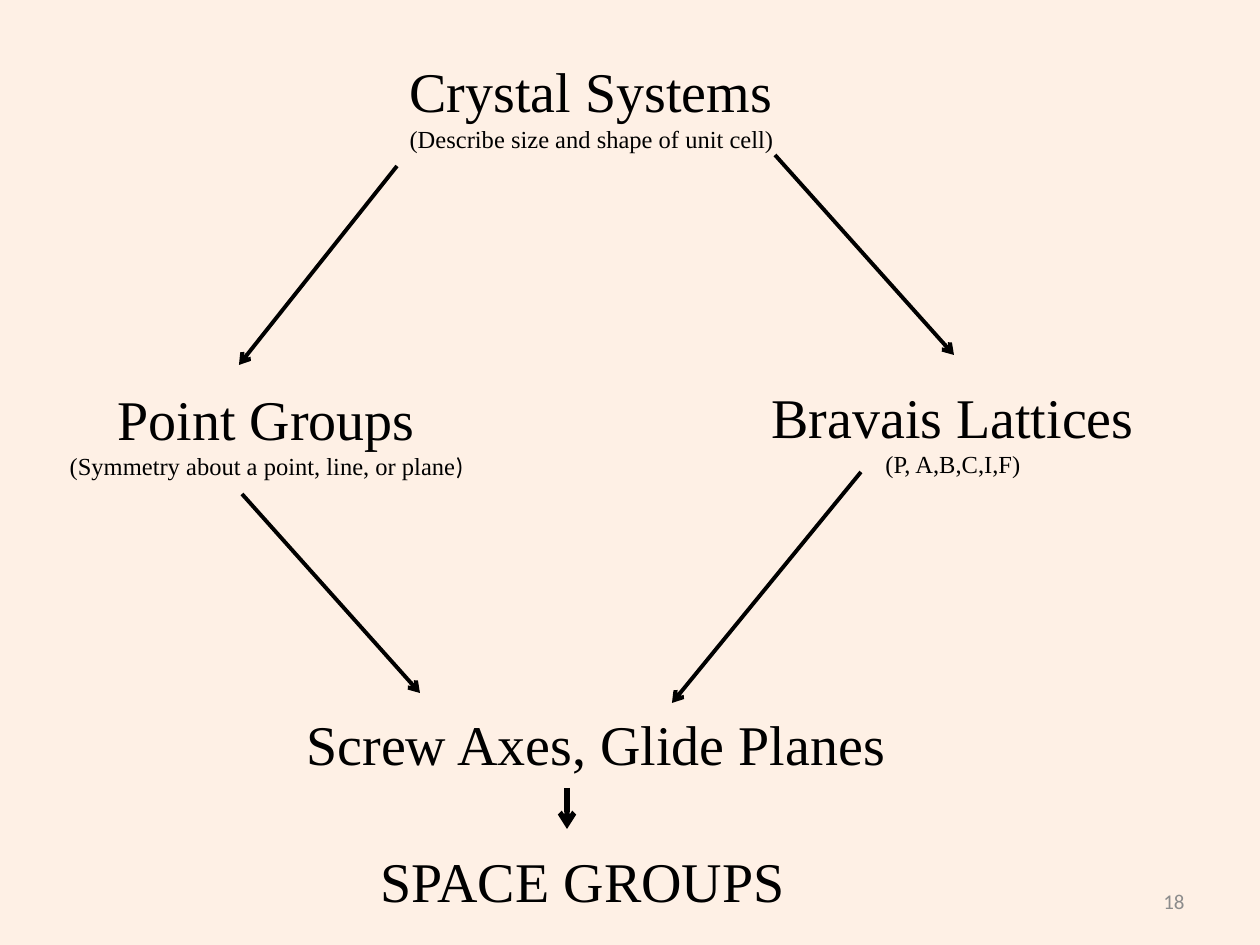
from dataclasses import dataclass
from lxml.etree import SubElement
from pptx import Presentation
from pptx.dml.color import RGBColor
from pptx.enum.shapes import MSO_CONNECTOR
from pptx.enum.text import MSO_ANCHOR, MSO_AUTO_SIZE, PP_ALIGN
from pptx.oxml.ns import qn
from pptx.util import Emu, Pt

LEFT, MID, RIGHT = PP_ALIGN.LEFT, PP_ALIGN.CENTER, PP_ALIGN.RIGHT


@dataclass(frozen=True)
class Theme:
    back: str = "FEF0E5"
    ink: str = "000000"
    grey: str = "8C8C8C"
    serif: str = "Times New Roman"
    sans: str = "Calibri"
    head: int = 32
    note: int = 14
    page: int = 12


T = Theme()

# Left, top, width, height in px; alignment; heading; note as (text, font) runs
TITLE = ((397, 50, 399, 111), LEFT, "Crystal Systems",
         [("(Describe size and shape of unit cell)", T.serif)])
NODES = [
    ((53, 378, 427, 111), MID, "Point Groups",
     [("(Symmetry about a point, line, or plane", T.serif), (")", T.sans)]),
    ((757, 376, 392, 111), MID, "Bravais Lattices",
     [("(P, A,B,C,I,F)", T.serif)]),
    ((294, 703, 610, 81), LEFT, "Screw Axes, Glide Planes", []),
    ((368, 840, 433, 81), LEFT, "SPACE GROUPS", []),
]
PAGE = ((903, 876, 294, 50), "18")

# Start and end in px, line width in points
ARROWS = [
    ((397, 166), (239, 365), 2.25),
    ((775, 155), (954, 355), 2.25),
    ((242, 494), (420, 693), 2.25),
    ((861, 472), (672, 703), 2.25),
    ((567, 788), (567, 829), 3),
]


def px(n):
    return Emu(round(n * 914400 / 126))


def write(para, text, size=T.note, font=T.serif, color=T.ink, align=LEFT):
    para.alignment = align
    run = para.add_run()
    run.text = text
    run.font.size = Pt(size)
    run.font.name = font
    run.font.color.rgb = RGBColor.from_string(color)


def place(shape, box):
    shape.left, shape.top, shape.width, shape.height = map(px, box)
    return shape.text_frame


def node(shape, box, align, head, note):
    """Fill a shape with a heading and, below it, an optional note."""
    frame = place(shape, box)
    frame.word_wrap = False
    frame.auto_size = MSO_AUTO_SIZE.SHAPE_TO_FIT_TEXT
    frame.vertical_anchor = MSO_ANCHOR.TOP
    write(frame.paragraphs[0], head, size=T.head, align=align)
    if note:
        para = frame.add_paragraph()
        for text, font in note:
            write(para, text, font=font, align=align)


def arrow(shapes, start, end, width):
    line = shapes.add_connector(MSO_CONNECTOR.STRAIGHT, *map(px, start + end))
    line.line.color.rgb = RGBColor.from_string(T.ink)
    line.line.width = Pt(width)
    SubElement(line.line._get_or_add_ln(), qn("a:tailEnd"), type="arrow")
    SubElement(line._element.spPr, qn("a:effectLst"))


def main():
    deck = Presentation()
    deck.slide_width, deck.slide_height = px(1260), px(945)
    slide = deck.slides.add_slide(deck.slide_layouts[5])
    fill = slide.background.fill
    fill.solid()
    fill.fore_color.rgb = RGBColor.from_string(T.back)

    shapes = slide.shapes
    node(shapes.title, *TITLE)
    for item in NODES:
        node(shapes.add_textbox(0, 0, 0, 0), *item)
    for item in ARROWS:
        arrow(shapes, *item)

    box, text = PAGE
    frame = place(shapes.add_textbox(0, 0, 0, 0), box)
    frame.word_wrap = True
    frame.vertical_anchor = MSO_ANCHOR.MIDDLE
    write(frame.paragraphs[0], text, size=T.page, font=T.sans,
          color=T.grey, align=RIGHT)
    deck.save("out.pptx")


if __name__ == "__main__":
    main()
